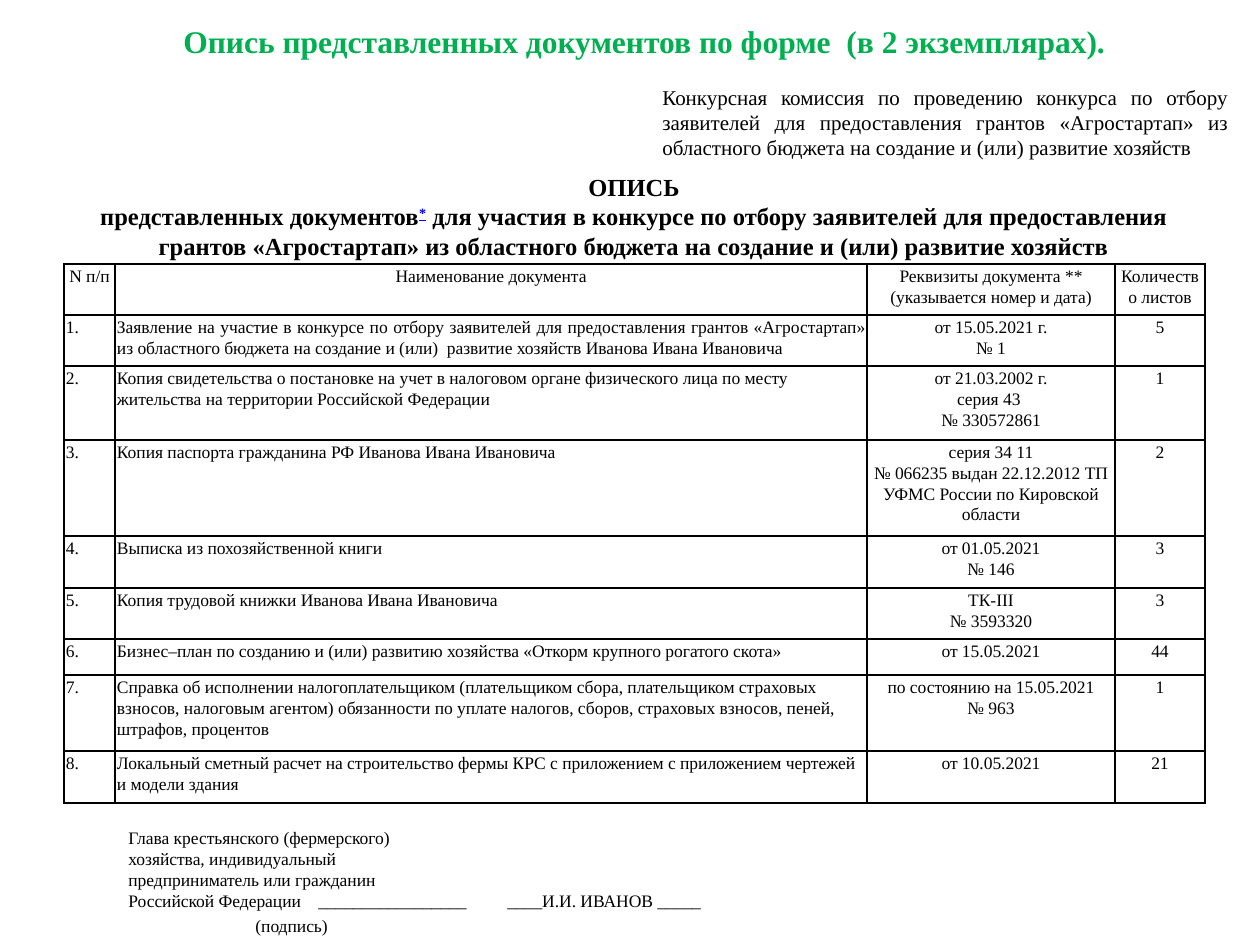
from dataclasses import dataclass

from lxml import etree
from pptx import Presentation
from pptx import util as u
from pptx.dml.color import RGBColor
from pptx.enum import text
from pptx.oxml.ns import qn

PX = 914400 // 126
LEFT, MID, JUST = text.PP_ALIGN.LEFT, text.PP_ALIGN.CENTER, text.PP_ALIGN.JUSTIFY
TOP, CENTRE = text.MSO_ANCHOR.TOP, text.MSO_ANCHOR.MIDDLE


@dataclass(frozen=True)
class Theme:
    face: str = "Times New Roman"
    ink: str = "000000"
    green: str = "00B050"
    link: str = "0000FF"
    title: int = 18
    head: int = 14
    body: int = 12
    small: int = 10


T = Theme()

COLS = [51, 752, 248, 90]
ALIGNS = [LEFT, LEFT, MID, MID]
HEIGHTS = [51, 51, 74, 96, 52, 51, 36, 76, 52]
HEADER = ["N п/п", "Наименование документа",
          "Реквизиты документа ** (указывается номер и дата)",
          "Количество листов"]
DOCS = [
    ("Заявление на участие в конкурсе по отбору заявителей для предоставления "
     "грантов «Агростартап» из областного бюджета на создание и (или)  развитие "
     "хозяйств Иванова Ивана Ивановича", "от 15.05.2021 г.\n№ 1", 5),
    ("Копия свидетельства о постановке на учет в налоговом органе физического "
     "лица по месту жительства на территории Российской Федерации",
     "от 21.03.2002 г.\nсерия 43 \n№ 330572861", 1),
    ("Копия паспорта гражданина РФ Иванова Ивана Ивановича",
     "серия 34 11\n№ 066235 выдан 22.12.2012 ТП УФМС России по Кировской области", 2),
    ("Выписка из похозяйственной книги", "от 01.05.2021\n№ 146", 3),
    ("Копия трудовой книжки Иванова Ивана Ивановича", "ТК-III\n№ 3593320", 3),
    ("Бизнес–план по созданию и (или) развитию хозяйства "
     "«Откорм крупного рогатого скота»", "от 15.05.2021", 44),
    ("Справка об исполнении налогоплательщиком (плательщиком сбора, плательщиком "
     "страховых взносов, налоговым агентом) обязанности по уплате налогов, сборов, "
     "страховых взносов, пеней, штрафов, процентов",
     "по состоянию на 15.05.2021\n№ 963", 1),
    ("Локальный сметный расчет на строительство фермы КРС с приложением "
     "с приложением чертежей и модели здания", "от 10.05.2021", 21),
]
ADDRESS = ("Конкурсная комиссия по проведению конкурса по отбору заявителей для "
           "предоставления грантов «Агростартап» из областного бюджета на создание "
           "и (или) развитие хозяйств")
SIGN = ("Глава крестьянского (фермерского)\nхозяйства, индивидуальный\n"
        "предприниматель или гражданин\n"
        "Российской Федерации\t_________________\t____И.И. ИВАНОВ _____\n"
        "\t\t\t(подпись)")


def style(frame, size, align, color=T.ink, bold=False):
    for para in frame.paragraphs:
        para.alignment = align
        font = para.font
        font.name, font.size, font.bold = T.face, u.Pt(size), bold
        font.color.rgb = RGBColor.from_string(color)


def place(shape, box, anchor=TOP):
    shape.left, shape.top, shape.width, shape.height = [n * PX for n in box]
    frame = shape.text_frame
    frame.word_wrap = True
    frame.auto_size = text.MSO_AUTO_SIZE.NONE
    frame.vertical_anchor = anchor
    return frame


def add_text(slide, box, words, size, align, anchor=TOP, bold=False):
    frame = place(slide.shapes.add_textbox(0, 0, 0, 0), box, anchor)
    frame.text = words
    style(frame, size, align, bold=bold)
    return frame


def add_title(slide):
    frame = place(slide.shapes.title, (94, 16, 1101, 50))
    frame.text = "Опись представленных документов по форме  (в 2 экземплярах)."
    style(frame, T.title, MID, T.green, True)


def add_head(slide):
    """Heading whose footnote star is a blue superscript."""
    frame = add_text(slide, (54, 165, 1160, 102), "ОПИСЬ\nпредставленных документов",
                     T.head, MID, CENTRE, True)
    para = frame.paragraphs[1]
    star = para.add_run()
    star.text = "*"
    star.font.underline = True
    star.font.color.rgb = RGBColor.from_string(T.link)
    star.font._element.set("baseline", "30000")
    para.add_run().text = (" для участия в конкурсе по отбору заявителей для "
                           "предоставления грантов «Агростартап» из областного "
                           "бюджета на создание и (или) развитие хозяйств")


def add_edges(cell):
    props = cell._tc.get_or_add_tcPr()
    for spot, side in enumerate(("lnL", "lnR", "lnT", "lnB")):
        line = etree.Element(qn(f"a:{side}"), w=str(u.Pt(1)))
        fill = etree.SubElement(line, qn("a:solidFill"))
        etree.SubElement(fill, qn("a:srgbClr"), val=T.ink)
        props.insert(spot, line)


def fill_cell(cell, words, align):
    cell.text = words
    cell.margin_left = cell.margin_right = 2 * PX
    cell.margin_top = cell.margin_bottom = 2 * PX
    cell.fill.background()
    style(cell.text_frame, T.small, align)
    for para in cell.text_frame.paragraphs:
        para.line_spacing = 1.07
    add_edges(cell)


def add_list(slide):
    rows = [HEADER] + [(f"{n}.", name, ref, str(count))
                       for n, (name, ref, count) in enumerate(DOCS, 1)]
    box = [n * PX for n in (64, 264, sum(COLS), sum(HEIGHTS))]
    table = slide.shapes.add_table(len(rows), len(COLS), *box).table
    table.first_row = table.horz_banding = False
    for col, width in zip(table.columns, COLS):
        col.width = width * PX
    for r, (row, height) in enumerate(zip(rows, HEIGHTS)):
        table.rows[r].height = height * PX
        for c, words in enumerate(row):
            fill_cell(table.cell(r, c), words, ALIGNS[c] if r else MID)
    table.cell(1, 1).text_frame.paragraphs[0].alignment = JUST


def set_tabs(para, indent, stops):
    props = para._p.get_or_add_pPr()
    props.set("marL", "0")
    props.set("indent", str(indent * PX))
    tabs = etree.Element(qn("a:tabLst"))
    for stop in stops:
        etree.SubElement(tabs, qn("a:tab"), pos=str(stop * PX), algn="l")
    props.insert(0, tabs)


def add_sign(slide):
    frame = add_text(slide, (54, 821, 1160, 124), SIGN, T.small, LEFT)
    for para in frame.paragraphs:
        set_tabs(para, 62, (269, 513, 661))
    frame.paragraphs[-1].space_before = u.Pt(2)


def main():
    deck = Presentation()
    deck.slide_width, deck.slide_height = u.Inches(10), u.Inches(7.5)
    slide = deck.slides.add_slide(deck.slide_layouts[5])
    add_title(slide)
    add_list(slide)
    add_text(slide, (650, 77, 591, 90), ADDRESS, T.body, JUST, CENTRE)
    add_head(slide)
    add_sign(slide)
    deck.save("out.pptx")


if __name__ == "__main__":
    main()
